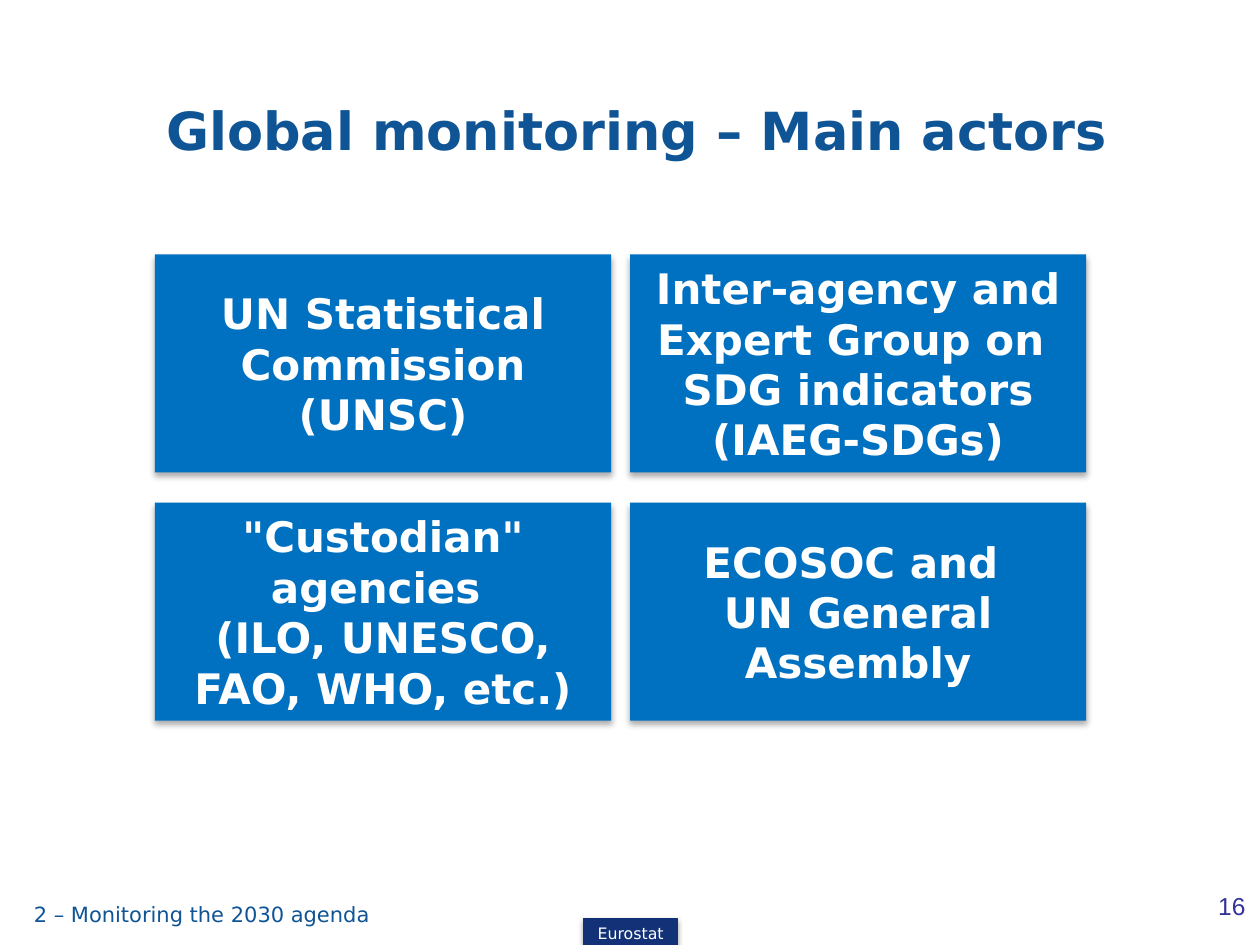
import dataclasses

import pptx
import pptx.dml.color
import pptx.enum.shapes
import pptx.enum.text
import pptx.oxml
import pptx.oxml.ns
import pptx.util
from pptx.util import Inches

SHAPE = pptx.enum.shapes.MSO_SHAPE
ALIGN = pptx.enum.text.PP_ALIGN
ANCHOR = pptx.enum.text.MSO_ANCHOR


@dataclasses.dataclass(frozen=True)
class Theme:
    font: str = "DejaVu Sans"
    number_font: str = "Arial"
    white: str = "FFFFFF"
    actor_fill: str = "0070C0"
    heading: str = "0F5494"
    number: str = "333399"
    badge: str = "133176"
    title_size: int = 30
    actor_size: int = 24
    number_size: int = 14
    footer_size: int = 12
    badge_size: int = 9


class SlideBuilder:
    def __init__(self, slide, theme):
        self.slide = slide
        self.theme = theme

    def color(self, value):
        return pptx.dml.color.RGBColor.from_string(value)

    def add_text(self, s, paragraphs, size, color, bold=False, font=None,
                 align=ALIGN.CENTER, anchor=ANCHOR.MIDDLE):
        """Each paragraph is a list of lines."""
        tf = s.text_frame
        tf.word_wrap = True
        tf.vertical_anchor = anchor
        for i, lines in enumerate(paragraphs):
            p = tf.add_paragraph() if i else tf.paragraphs[0]
            p.alignment = align
            for j, line in enumerate(lines):
                if j:
                    p.add_line_break()
                r = p.add_run()
                r.text = line
                r.font.name = font or self.theme.font
                r.font.size = pptx.util.Pt(size)
                r.font.bold = bold
                r.font.color.rgb = self.color(color)

    def shadow(self, s, alpha, blur, distance):
        s.shadow.inherit = False
        effects = s._element.spPr.find(pptx.oxml.ns.qn("a:effectLst"))
        effects.append(pptx.oxml.parse_xml(
            f'<a:outerShdw {pptx.oxml.ns.nsdecls("a")} '
            f'blurRad="{pptx.util.Pt(blur)}" dist="{pptx.util.Pt(distance)}" '
            f'dir="5400000" rotWithShape="0"><a:srgbClr val="000000">'
            f'<a:alpha val="{alpha * 1000}"/></a:srgbClr></a:outerShdw>'))

    def box(self, left, top, width, height, fill=None, line=None, kind=SHAPE.RECTANGLE):
        s = self.slide.shapes.add_shape(
            kind, Inches(left), Inches(top), Inches(width), Inches(height))
        s.shadow.inherit = False
        if fill:
            s.fill.solid()
            s.fill.fore_color.rgb = self.color(fill)
        else:
            s.fill.background()
        if line:
            s.line.color.rgb = self.color(line)
            s.line.width = pptx.util.Pt(0.75)
        else:
            s.line.fill.background()
        return s

    def title(self, text):
        s = self.box(0.59, 0.68, 8.93, 0.69, kind=SHAPE.ROUNDED_RECTANGLE)
        self.add_text(s, [[text]], self.theme.title_size, self.theme.heading, bold=True)

    def actor(self, left, top, paragraphs):
        s = self.box(left, top, 3.62, 1.73, self.theme.actor_fill)
        self.shadow(s, 32, 3.5, 2.2)
        self.add_text(s, paragraphs, self.theme.actor_size, self.theme.white, bold=True)

    def label(self, left, top, width, height, text, size, color, font=None):
        s = self.slide.shapes.add_textbox(
            Inches(left), Inches(top), Inches(width), Inches(height))
        self.add_text(s, [[text]], size, color, font=font,
                      align=ALIGN.LEFT, anchor=ANCHOR.TOP)

    def badge(self, text):
        s = self.box(4.63, 7.29, 0.75, 0.24, self.theme.badge, self.theme.badge)
        self.shadow(s, 35, 3.1, 1.8)
        self.add_text(s, [[text]], self.theme.badge_size, self.theme.white)


def main():
    prs = pptx.Presentation()
    prs.slide_width, prs.slide_height = Inches(10), Inches(7.5)
    theme = Theme()
    slide = SlideBuilder(prs.slides.add_slide(prs.slide_layouts[6]), theme)

    # Main actors in a two-by-two grid
    actors = [
        [["UN Statistical Commission (UNSC)"]],
        [["Inter-agency and Expert Group on ", "SDG indicators (IAEG-SDGs)"]],
        [['"Custodian" agencies ', "(ILO, UNESCO, FAO, WHO, etc.)"]],
        [["ECOSOC and "], ["UN General Assembly"]],
    ]
    for i, paragraphs in enumerate(actors):
        row, column = divmod(i, 2)
        slide.actor(1.23 + 3.77 * column, 2.02 + 1.97 * row, paragraphs)

    # Title
    slide.title("Global monitoring – Main actors")

    # Footer
    slide.label(9.57, 7.02, 0.47, 0.28, "16",
                theme.number_size, theme.number, theme.number_font)
    slide.label(0.17, 7.11, 5.05, 0.36, "2 – Monitoring the 2030 agenda",
                theme.footer_size, theme.heading)
    slide.badge("Eurostat")

    prs.save("out.pptx")


if __name__ == "__main__":
    main()
